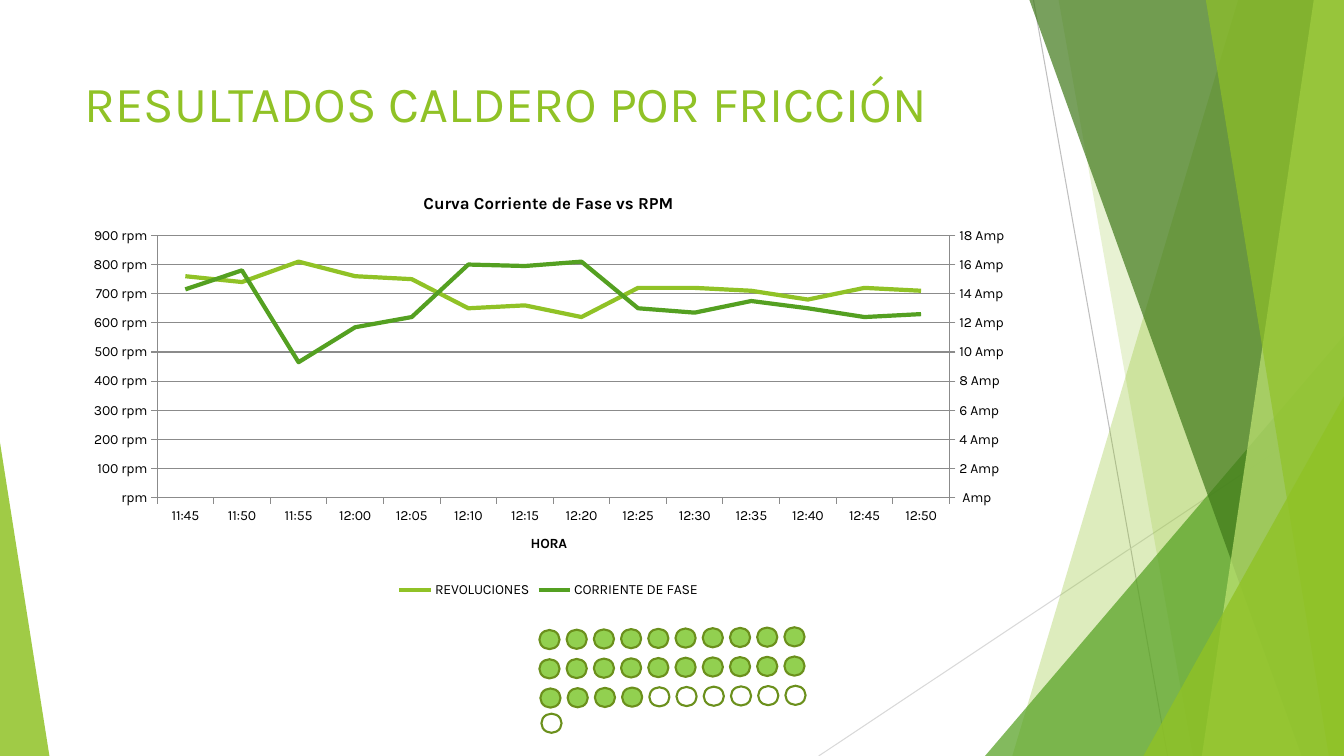
import copy

import pptx
import pptx.chart.data
import pptx.dml.color
import pptx.enum.chart
import pptx.enum.shapes
import pptx.enum.text
import pptx.oxml
import pptx.oxml.ns
import pptx.util

WIDE, HIGH = 13.33, 7.5
FONT = "Karla"
LIME, GREEN, GREY = "90C226", "54A021", "8B8B8B"
TITLE = "RESULTADOS CALDERO POR FRICCIÓN"
CHART_TITLE, AXIS_TITLE = "Curva Corriente de Fase vs RPM", "HORA"
START, STEP = 11 * 60 + 45, 5  # minutes
RPM = [760, 740, 810, 760, 750, 650, 660, 620, 720, 720, 710, 680, 720, 710]
AMPS = [14.3, 15.6, 9.3, 11.7, 12.4, 16, 15.9, 16.2, 13, 12.7, 13.5, 13, 12.4, 12.6]
SERIES = [("REVOLUCIONES", RPM, LIME), ("CORRIENTE DE FASE", AMPS, GREEN)]
PLOT = {"x": 0.087, "y": 0.143, "w": 0.836, "h": 0.614}  # shares of the chart

RAYS = [((10.25, 0), (11.58, HIGH), "BFBFBF"),
        ((WIDE, 4.03), (8.12, HIGH), "D9D9D9")]
# Bands run to the right edge: top x, bottom x, colour, opacity
# Wedges stand on the bottom edge: left, width, height, apex, colour, opacity
DECOR = [("band", 12.28, 10.04, LIME, 30),
         ("band", 10.5, 11.83, LIME, 20),
         ("wedge", 9.77, 3.56, 4.17, 1, GREEN, 72),
         ("band", 10.21, 12.91, "3F7819", 70),
         ("band", 13.03, 11.92, "C0E474", 70),
         ("band", 11.96, 13.18, LIME, 65),
         ("wedge", 11.34, 1.99, 3.57, 1, LIME, 80),
         ("wedge", 0, 0.49, 3.11, 0, LIME, 85)]
# Dot rows: left, top, fills
DOTS = [(5.35, 6.25, ["92D050"] * 10),
        (5.35, 6.54, ["92D050"] * 10),
        (5.36, 6.83, ["92D050"] * 4 + [None] * 6),
        (5.37, 7.08, ["FFFFFF"])]
PITCH, RISE = 0.27, 0.003

inch = pptx.util.Inches
qn = pptx.oxml.ns.qn
C = pptx.enum.chart


def rgb(code):
    return pptx.dml.color.RGBColor.from_string(code)


def style(font, size, color="000000", bold=False):
    font.name, font.size, font.bold = FONT, pptx.util.Pt(size), bold
    font.color.rgb = rgb(color)


def write(frame, text, **form):
    frame.text = text
    style(frame.paragraphs[0].runs[0].font, **form)


def stroke(line, color, width):
    line.color.rgb = rgb(color)
    line.width = pptx.util.Pt(width)


def paint(shape, color, alpha=100):
    shape.shadow.inherit = False
    if color is None:
        shape.fill.background()
        return
    shape.fill.solid()
    shape.fill.fore_color.rgb = rgb(color)
    if alpha < 100:
        tint = shape.fill._xPr.find(".//" + qn("a:srgbClr"))
        tint.append(pptx.oxml.parse_xml(
            f'<a:alpha {pptx.oxml.ns.nsdecls("a")} val="{alpha * 1000}"/>'))


def ray(slide, start, end, color):
    line = slide.shapes.add_connector(
        pptx.enum.shapes.MSO_CONNECTOR.STRAIGHT, *map(inch, start + end))
    stroke(line.line, color, 0.75)
    line.element.spPr.append(pptx.oxml.parse_xml(
        f'<a:effectLst {pptx.oxml.ns.nsdecls("a")}/>'))


def band(slide, top, base, color, alpha):
    pen = slide.shapes.build_freeform(inch(top), 0)
    pen.add_line_segments([(inch(x), inch(y)) for x, y in
                           ((WIDE, 0), (WIDE, HIGH), (base, HIGH))])
    shape = pen.convert_to_shape()
    paint(shape, color, alpha)
    shape.line.fill.background()


def wedge(slide, left, wide, high, apex, color, alpha):
    shape = slide.shapes.add_shape(
        pptx.enum.shapes.MSO_SHAPE.ISOSCELES_TRIANGLE,
        inch(left), inch(HIGH - high), inch(wide), inch(high))
    shape.adjustments[0] = apex
    paint(shape, color, alpha)
    shape.line.fill.background()


def dots(slide):
    for left, top, fills in DOTS:
        for col, color in enumerate(fills):
            dot = slide.shapes.add_shape(
                pptx.enum.shapes.MSO_SHAPE.OVAL, inch(left + col * PITCH),
                inch(top - col * RISE), inch(0.2), inch(0.19))
            paint(dot, color)
            stroke(dot.line, "6B901C", 1.5)


def split(chart):
    """Move the last series to a second value axis on the right."""
    area = chart.element.find(".//" + qn("c:plotArea"))
    first, cat, val = (area.find(qn("c:" + tag))
                       for tag in ("lineChart", "catAx", "valAx"))
    second, cat2, val2 = map(copy.deepcopy, (first, cat, val))
    first.remove(first.findall(qn("c:ser"))[1])
    second.remove(second.findall(qn("c:ser"))[0])
    first.addnext(second)
    val.addnext(val2)
    val2.addnext(cat2)
    for node, ids in ((second, "5001 5002"), (cat2, "5001"), (val2, "5002")):
        for item, number in zip(node.findall(qn("c:axId")), ids.split()):
            item.set("val", number)

    def put(node, **values):
        for tag, value in values.items():
            node.find(qn("c:" + tag)).set("val", value)

    put(cat2, crossAx="5002", delete="1")
    cat2.remove(cat2.find(qn("c:title")))
    put(val2, crossAx="5001", crosses="max", axPos="r", majorUnit="2")
    put(val2.find(qn("c:scaling")), max="18")
    val2.remove(val2.find(qn("c:majorGridlines")))
    val2.find(qn("c:numFmt")).set("formatCode", '#" Amp"')

    old = area.find(qn("c:layout"))
    if old is not None:
        area.remove(old)
    sizes = "".join(f'<c:{key} val="{share}"/>' for key, share in PLOT.items())
    area.insert(0, pptx.oxml.parse_xml(
        f'<c:layout {pptx.oxml.ns.nsdecls("c")}><c:manualLayout>'
        '<c:layoutTarget val="inner"/><c:xMode val="edge"/><c:yMode val="edge"/>'
        f'{sizes}</c:manualLayout></c:layout>'))


def graph(slide):
    data = pptx.chart.data.CategoryChartData()
    times = [START + STEP * n for n in range(len(RPM))]
    data.categories = [f"{t // 60}:{t % 60:02}" for t in times]
    for name, values, _ in SERIES:
        data.add_series(name, values)
    chart = slide.shapes.add_chart(C.XL_CHART_TYPE.LINE, inch(0.74), inch(1.73),
                                   inch(9.4), inch(4.24), data).chart
    style(chart.font, 10)
    write(chart.chart_title.text_frame, CHART_TITLE, size=12, bold=True)
    chart.has_legend = True
    chart.legend.position = C.XL_LEGEND_POSITION.BOTTOM
    chart.legend.include_in_layout = False
    chart.plots[0].vary_by_categories = False
    for line, (_, _, color) in zip(chart.plots[0].series, SERIES):
        line.smooth = False
        stroke(line.format.line, color, 3)
    for axis in (chart.category_axis, chart.value_axis):
        axis.major_tick_mark = C.XL_TICK_MARK.OUTSIDE
        axis.minor_tick_mark = C.XL_TICK_MARK.NONE
        stroke(axis.format.line, GREY, 0.75)
    write(chart.category_axis.axis_title.text_frame, AXIS_TITLE, size=10, bold=True)
    axis = chart.value_axis
    axis.minimum_scale, axis.maximum_scale, axis.major_unit = 0, 900, 100
    axis.tick_labels.number_format = '#" rpm"'
    axis.tick_labels.number_format_is_linked = False
    stroke(axis.major_gridlines.format.line, GREY, 0.75)
    split(chart)


def main():
    deck = pptx.Presentation()
    deck.slide_width, deck.slide_height = inch(WIDE), inch(HIGH)
    slide = deck.slides.add_slide(deck.slide_layouts[5])
    for item in RAYS:
        ray(slide, *item)
    for kind, *form in DECOR:
        (band if kind == "band" else wedge)(slide, *form)
    title = slide.shapes.title
    title.left, title.top, title.width, title.height = map(inch, (0.74, 0.67, 9.4, 1.44))
    frame = title.text_frame
    write(frame, TITLE, size=36, color=LIME)
    frame.word_wrap = True
    frame.auto_size = pptx.enum.text.MSO_AUTO_SIZE.NONE
    frame.vertical_anchor = pptx.enum.text.MSO_ANCHOR.TOP
    frame.paragraphs[0].alignment = pptx.enum.text.PP_ALIGN.LEFT
    graph(slide)
    dots(slide)
    deck.save("out.pptx")


if __name__ == "__main__":
    main()
